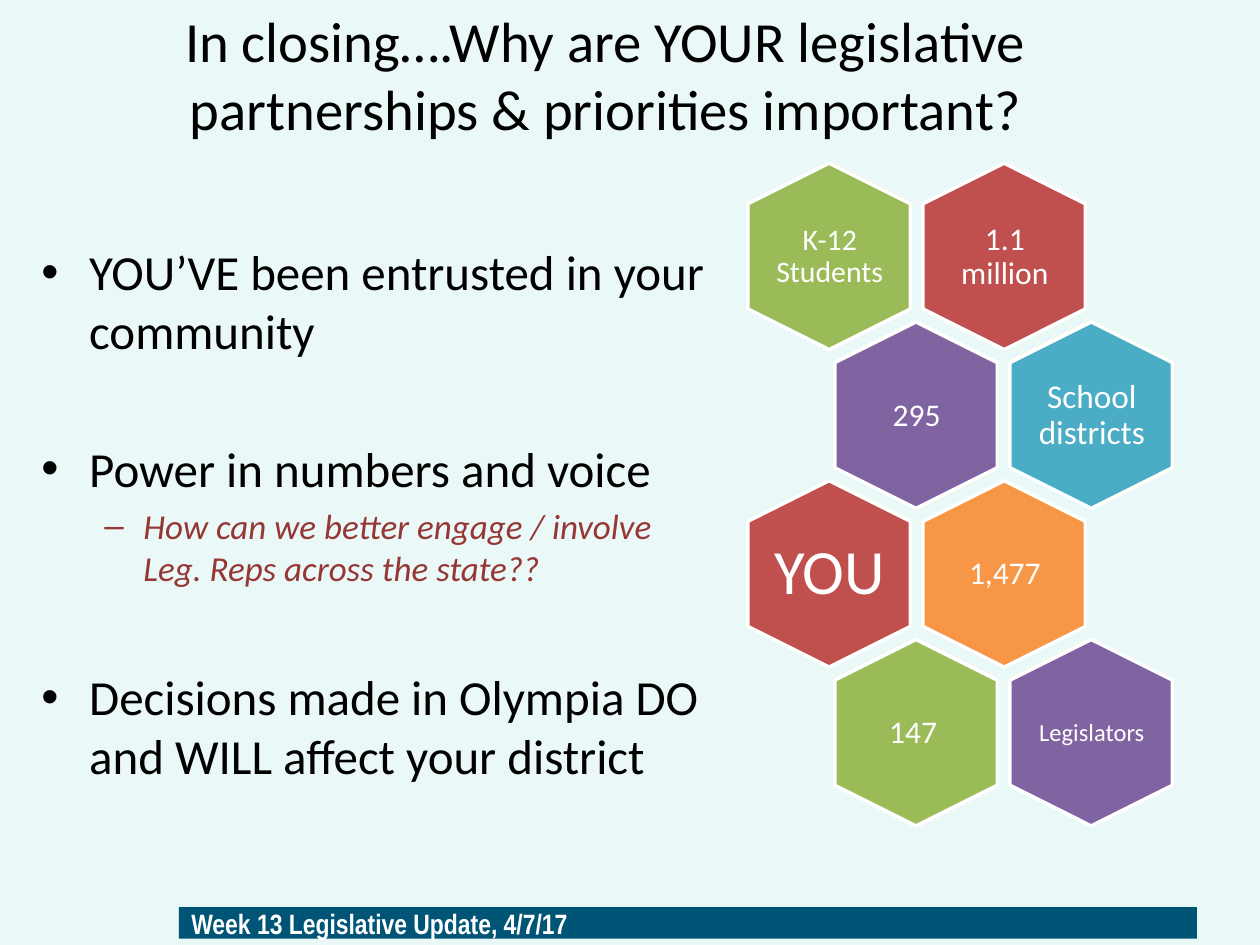
from lxml import etree
from pptx import Presentation
from pptx import util as u
from pptx.dml.color import RGBColor
from pptx.enum import shapes, text
from pptx.oxml import ns

PX = 9144
WHITE = RGBColor(255, 255, 255)
BLACK = RGBColor(0, 0, 0)
PALE = RGBColor(0xEA, 0xF8, 0xF8)
NAVY = RGBColor(0x00, 0x54, 0x76)
MAROON = RGBColor(0x95, 0x37, 0x35)
RED = RGBColor(0xC0, 0x50, 0x4D)
GREEN = RGBColor(0x9B, 0xBB, 0x59)
PURPLE = RGBColor(0x80, 0x64, 0xA2)
TEAL = RGBColor(0x4B, 0xAC, 0xC6)
ORANGE = RGBColor(0xF7, 0x96, 0x46)

POINTS = [
    ("YOU’VE been entrusted in your community", 0, 6),
    ("Power in numbers and voice", 0, 45),
    ("How can we better engage / involve Leg. Reps across the state??", 1, 4),
    ("Decisions made in Olympia DO and WILL affect your district", 0, 45),
]
LEVELS = [("•", 38, 38, 28, BLACK, False), ("–", 81, 31, 20, MAROON, True)]
CELLS = [
    [("K-12 Students", 17, GREEN, 0), ("1.1 million", 18, RED, 7)],
    [("295", 18, PURPLE, 7), ("School districts", 19, TEAL, 0)],
    [("YOU", 36, RED, 0), ("1,477", 18, ORANGE, 7)],
    [("147 ", 18, GREEN, 7), ("Legislators", 14, PURPLE, 0)],
]


def px(*nums):
    """Turn px lengths into EMU."""
    return [n * PX for n in nums]


def add_run(para, words, size, color, face="Calibri", bold=False, slant=False):
    """Add one styled run to a paragraph."""
    run = para.add_run()
    run.text = words
    font = run.font
    font.name, font.size, font.color.rgb = face, u.Pt(size), color
    font.bold, font.italic = bold, slant


def add_shape(slide, kind, box, fill):
    """Add a flat filled shape without a line."""
    shape = slide.shapes.add_shape(kind, *px(*box))
    shape.shadow.inherit = False
    shape.fill.solid()
    shape.fill.fore_color.rgb = fill
    shape.line.fill.background()
    return shape


def add_foot(slide, box):
    """Draw the footer bar with its label."""
    bar = add_shape(slide, shapes.MSO_SHAPE.RECTANGLE, box, NAVY)
    frame = bar.text_frame
    frame.vertical_anchor = text.MSO_ANCHOR.MIDDLE
    para = frame.paragraphs[0]
    para.alignment = text.PP_ALIGN.LEFT
    add_run(para, "Week 13 Legislative Update, 4/7/17", 16, WHITE, "Arial Narrow", True)


def add_title(slide, box):
    """Place and fill the title placeholder."""
    title = slide.shapes.title
    title.left, title.top, title.width, title.height = px(*box)
    frame = title.text_frame
    frame.auto_size = text.MSO_AUTO_SIZE.NONE
    frame.vertical_anchor = text.MSO_ANCHOR.MIDDLE
    para = frame.paragraphs[0]
    para.alignment = text.PP_ALIGN.CENTER
    add_run(para, "In closing….Why are YOUR legislative partnerships & priorities important?", 32.4, BLACK)


def add_points(slide, box):
    """Write the bulleted points on two levels."""
    frame = slide.shapes.add_textbox(*px(*box)).text_frame
    frame.word_wrap = True
    for i, (words, level, gap) in enumerate(POINTS):
        mark, left, hang, size, color, slant = LEVELS[level]
        para = frame.add_paragraph() if i else frame.paragraphs[0]
        para.level = level
        para.space_before = u.Pt(gap)
        props = para._p.get_or_add_pPr()
        props.set("marL", str(left * PX))
        props.set("indent", str(-hang * PX))
        etree.SubElement(props, ns.qn("a:buFont")).set("typeface", "Arial")
        etree.SubElement(props, ns.qn("a:buChar")).set("char", mark)
        add_run(para, words, size, color, slant=slant)


def add_cell(slide, left, top, cell):
    """Draw one upright hexagon and its label."""
    words, size, fill, pad = cell
    hexa = add_shape(slide, shapes.MSO_SHAPE.HEXAGON, (left, top, 148, 129), fill)
    hexa.rotation = 90
    hexa.line.color.rgb = WHITE
    hexa.line.width = u.Pt(2)
    frame = slide.shapes.add_textbox(*px(left + 30, top + 14, 89, 102)).text_frame
    frame.word_wrap = True
    frame.vertical_anchor = text.MSO_ANCHOR.MIDDLE
    frame.margin_left = frame.margin_right = pad * PX
    frame.margin_top = frame.margin_bottom = pad * PX
    para = frame.paragraphs[0]
    para.alignment = text.PP_ALIGN.CENTER
    para.line_spacing = 0.9
    add_run(para, words, size, WHITE)


def add_comb(slide, left, top):
    """Lay out the hexagons, with odd rows shifted by half a step."""
    for i, row in enumerate(CELLS):
        for j, cell in enumerate(row):
            add_cell(slide, left + 139 * j + 69 * (i % 2), top + 126 * i, cell)


def main():
    """Build and save the slide."""
    deck = Presentation()
    deck.slide_width, deck.slide_height = px(1000, 750)
    slide = deck.slides.add_slide(deck.slide_layouts[5])
    slide.background.fill.solid()
    slide.background.fill.fore_color.rgb = PALE
    add_foot(slide, (142, 720, 808, 25))
    add_title(slide, (25, 25, 911, 67))
    add_points(slide, (23, 187, 551, 491))
    add_comb(slide, 584, 139)
    deck.save("out.pptx")


if __name__ == "__main__":
    main()
